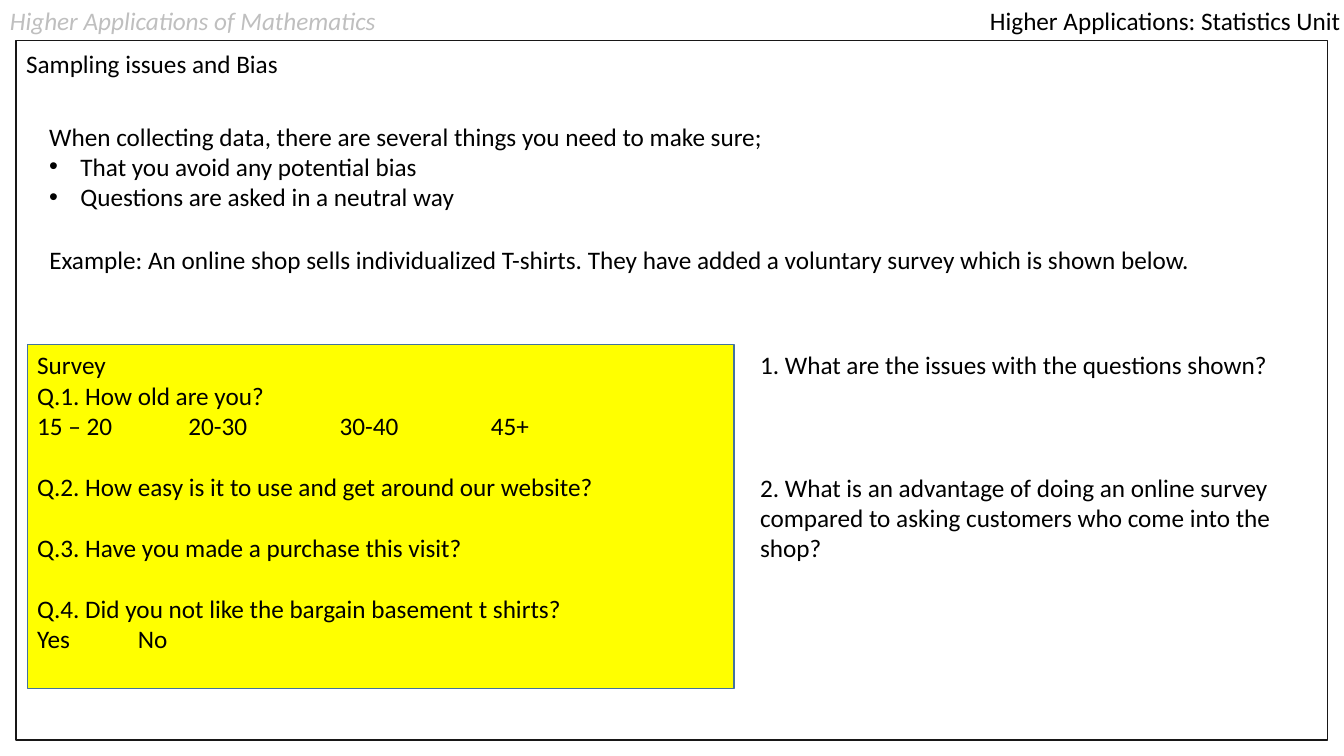
from dataclasses import dataclass

from lxml import etree
from pptx import Presentation
from pptx.dml.color import RGBColor
from pptx.enum.shapes import MSO_SHAPE
from pptx.oxml.ns import qn
from pptx.util import Inches, Pt

RECTANGLE = MSO_SHAPE.RECTANGLE
FONT = "Calibri"
SIZE = 18
LINE_HEIGHT = 1.22 * SIZE
INDENT = 0.31
HEADING_HEIGHT = 0.4


@dataclass
class Line:
    text: str
    skip: int = 0  # empty line heights above
    bullet: bool = False


def rgb(value):
    return RGBColor.from_string(value)


def add_bullet(paragraph):
    properties = paragraph._p.get_or_add_pPr()
    properties.set("marL", str(Inches(INDENT)))
    properties.set("indent", str(-Inches(INDENT)))
    etree.SubElement(properties, qn("a:buFont")).set("typeface", "Arial")
    etree.SubElement(properties, qn("a:buChar")).set("char", "•")


def add_text(slide, box, lines, color="000000", italic=False, wrap=False):
    frame = slide.shapes.add_textbox(*map(Inches, box)).text_frame
    frame.word_wrap = wrap
    for index, line in enumerate(lines):
        paragraph = frame.add_paragraph() if index else frame.paragraphs[0]
        if line.skip:
            paragraph.space_before = Pt(line.skip * LINE_HEIGHT)
        if line.bullet:
            add_bullet(paragraph)
        run = paragraph.add_run()
        run.text = line.text
        run.font.name = FONT
        run.font.size = Pt(SIZE)
        run.font.italic = italic
        run.font.color.rgb = rgb(color)


def add_panel(slide, box, line, fill=None):
    panel = slide.shapes.add_shape(RECTANGLE, *map(Inches, box))
    panel.shadow.inherit = False
    if fill:
        panel.fill.solid()
        panel.fill.fore_color.rgb = rgb(fill)
    else:
        panel.fill.background()
    panel.line.color.rgb = rgb(line)
    panel.line.width = Pt(1)


def add_header(slide, left, top, width):
    course_width, unit_width = 3.87, 3.72
    add_text(slide, (left, top, course_width, HEADING_HEIGHT),
             [Line("Higher Applications of Mathematics")],
             color="BFBFBF", italic=True)
    add_text(slide, (left + width - unit_width, top, unit_width, HEADING_HEIGHT),
             [Line("Higher Applications: Statistics Unit")])


def add_introduction(slide, left, top, width, height):
    add_panel(slide, (left, top, width, height), "181717")
    add_text(slide, (left, top + 0.03, 2.73, HEADING_HEIGHT),
             [Line("Sampling issues and Bias")])
    body_left = left + 0.23
    add_text(slide, (body_left, top + 0.75, 7.36, 1.01), [
        Line("When collecting data, there are several things you need to make sure;"),
        Line("That you avoid any potential bias", bullet=True),
        Line("Questions are asked in a neutral way", bullet=True),
    ])
    add_text(slide, (body_left, top + 1.97, 11.65, HEADING_HEIGHT), [
        Line("Example: An online shop sells individualized T-shirts. "
             "They have added a voluntary survey which is shown below."),
    ])


def add_survey(slide, left, top, width, height):
    add_panel(slide, (left, top, width, height), "43739E", fill="FFFF00")
    add_text(slide, (left, top, 6.64, 3.13), [
        Line("Survey"),
        Line("Q.1. How old are you?"),
        Line("\t\t".join(["15 – 20", "20-30", "30-40", "45+"])),
        Line("Q.2. How easy is it to use and get around our website?", skip=1),
        Line("Q.3. Have you made a purchase this visit?", skip=1),
        Line("Q.4. Did you not like the bargain basement t shirts?", skip=1),
        Line("\t\t".join(["Yes", "No"])),
    ])


def add_questions(slide, left, top, width, height):
    add_text(slide, (left, top, width, height), [
        Line("1. What are the issues with the questions shown?"),
        Line("2. What is an advantage of doing an online survey compared to "
             "asking customers who come into the shop?", skip=3),
    ], wrap=True)


def main():
    presentation = Presentation()
    presentation.slide_width = Inches(13.33)
    presentation.slide_height = Inches(7.5)
    slide = presentation.slides.add_slide(presentation.slide_layouts[6])
    add_header(slide, 0, 0, 13.44)
    add_introduction(slide, 0.16, 0.4, 13.01, 6.94)
    add_survey(slide, 0.27, 3.42, 7.01, 3.41)
    add_questions(slide, 7.44, 3.42, 5.51, 2.22)
    presentation.save("out.pptx")


if __name__ == "__main__":
    main()
